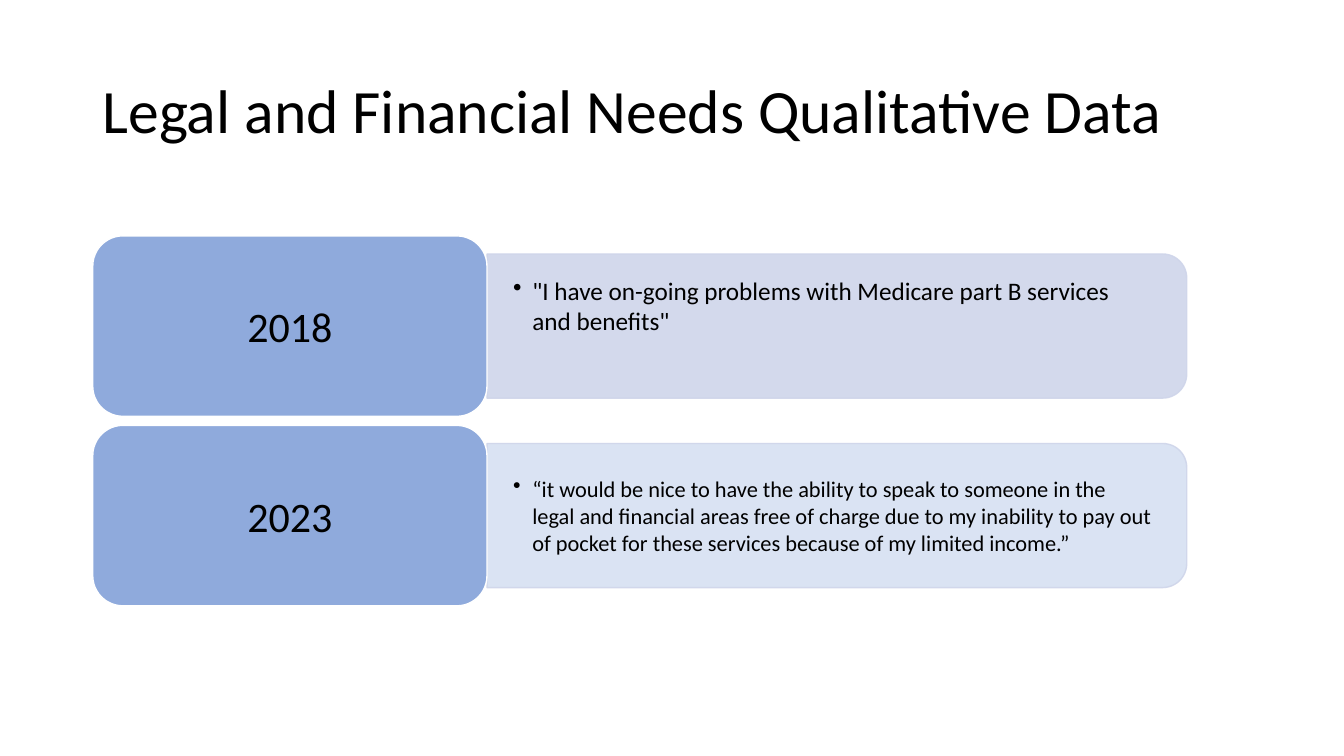
import pptx
import pptx.dml.color
import pptx.enum.shapes
import pptx.enum.text
import pptx.oxml
import pptx.oxml.ns
import pptx.util
from pptx.util import Inches

SHAPES = pptx.enum.shapes.MSO_SHAPE
ANCHOR = pptx.enum.text.MSO_ANCHOR
ALIGN = pptx.enum.text.PP_ALIGN

ROW_TOP, ROW_PITCH = 2.34, 1.88
YEAR_LEFT, YEAR_WIDTH, YEAR_HEIGHT = 0.92, 3.91, 1.79
PANEL_LEFT, PANEL_WIDTH, PANEL_HEIGHT = 4.83, 6.94, 1.43
QUOTE_LEFT, QUOTE_WIDTH, QUOTE_HEIGHT = 4.82, 6.87, 1.29

# year, quote, quote size, panel colour, panel opacity, quote anchor
ROWS = [
    ("2018",
     '"I have on-going problems with Medicare part B services and benefits"',
     18, "CFD5EA", 90, ANCHOR.TOP),
    ("2023",
     "“it would be nice to have the ability to speak to someone in the legal "
     "and financial areas free of charge due to my inability to pay out of "
     "pocket for these services because of my limited income.”",
     16, "DAE3F3", 100, ANCHOR.MIDDLE),
]


def color(hex_value):
    return pptx.dml.color.RGBColor.from_string(hex_value)


def set_opacity(fill, percent):
    """Add an alpha value to a solid fill."""
    if percent < 100:
        clr = fill._xPr.find(".//" + pptx.oxml.ns.qn("a:srgbClr"))
        clr.append(pptx.oxml.parse_xml(
            f'<a:alpha {pptx.oxml.ns.nsdecls("a")} val="{percent * 1000}"/>'))


def add_box(slide, kind, left, top, width, height, fill, line):
    shape = slide.shapes.add_shape(
        kind, Inches(left), Inches(top), Inches(width), Inches(height))
    shape.shadow.inherit = False
    shape.fill.solid()
    shape.fill.fore_color.rgb = color(fill)
    shape.line.color.rgb = color(line)
    shape.line.width = pptx.util.Pt(1)
    return shape


def set_text(shape, text, size, anchor, side=0.1, edge=0.05):
    """Write one paragraph into a shape and return the paragraph."""
    frame = shape.text_frame
    frame.text = text
    frame.word_wrap = True
    frame.vertical_anchor = anchor
    frame.margin_left = frame.margin_right = Inches(side)
    frame.margin_top = frame.margin_bottom = Inches(edge)
    paragraph = frame.paragraphs[0]
    font = paragraph.runs[0].font
    font.name = "Calibri"
    font.size = pptx.util.Pt(size)
    font.color.rgb = color("000000")
    return paragraph


def add_text(slide, left, top, width, height, *text_options):
    box = slide.shapes.add_textbox(
        Inches(left), Inches(top), Inches(width), Inches(height))
    return set_text(box, *text_options)


def add_bullet(paragraph, indent):
    properties = paragraph._p.get_or_add_pPr()
    properties.set("marL", str(Inches(indent)))
    properties.set("indent", str(-Inches(indent)))
    properties.append(pptx.oxml.parse_xml(
        f'<a:buChar {pptx.oxml.ns.nsdecls("a")} char="•"/>'))


def add_panel(slide, middle, fill, opacity):
    """Draw the panel upright around its centre, then turn it sideways."""
    panel = add_box(
        slide, SHAPES.ROUND_2_SAME_RECTANGLE,
        PANEL_LEFT + (PANEL_WIDTH - PANEL_HEIGHT) / 2, middle - PANEL_WIDTH / 2,
        PANEL_HEIGHT, PANEL_WIDTH, fill, "CFD5EA")
    panel.rotation = 90
    set_opacity(panel.fill, opacity)
    set_opacity(panel.line.fill, 90)


def add_row(slide, top, year, quote, size, fill, opacity, anchor):
    middle = top + YEAR_HEIGHT / 2
    add_panel(slide, middle, fill, opacity)

    # Quote
    paragraph = add_text(
        slide, QUOTE_LEFT, middle - QUOTE_HEIGHT / 2, QUOTE_WIDTH, QUOTE_HEIGHT,
        quote, size, anchor, 0.27, 0.14)
    add_bullet(paragraph, 0.19)

    # Year
    tile = add_box(slide, SHAPES.ROUNDED_RECTANGLE, YEAR_LEFT, top,
                   YEAR_WIDTH, YEAR_HEIGHT, "8FAADC", "FFFFFF")
    set_text(tile, year, 30, ANCHOR.MIDDLE).alignment = ALIGN.CENTER


def main():
    presentation = pptx.Presentation()
    presentation.slide_width = Inches(13.33)
    presentation.slide_height = Inches(7.5)
    slide = presentation.slides.add_slide(presentation.slide_layouts[6])

    # Title
    title = add_text(slide, 0.92, 0.4, 11.5, 1.45,
                     "Legal and Financial Needs Qualitative Data",
                     44, ANCHOR.MIDDLE)
    title.line_spacing = 0.9

    # One row per year
    for index, row in enumerate(ROWS):
        add_row(slide, ROW_TOP + index * ROW_PITCH, *row)

    presentation.save("out.pptx")


if __name__ == "__main__":
    main()
